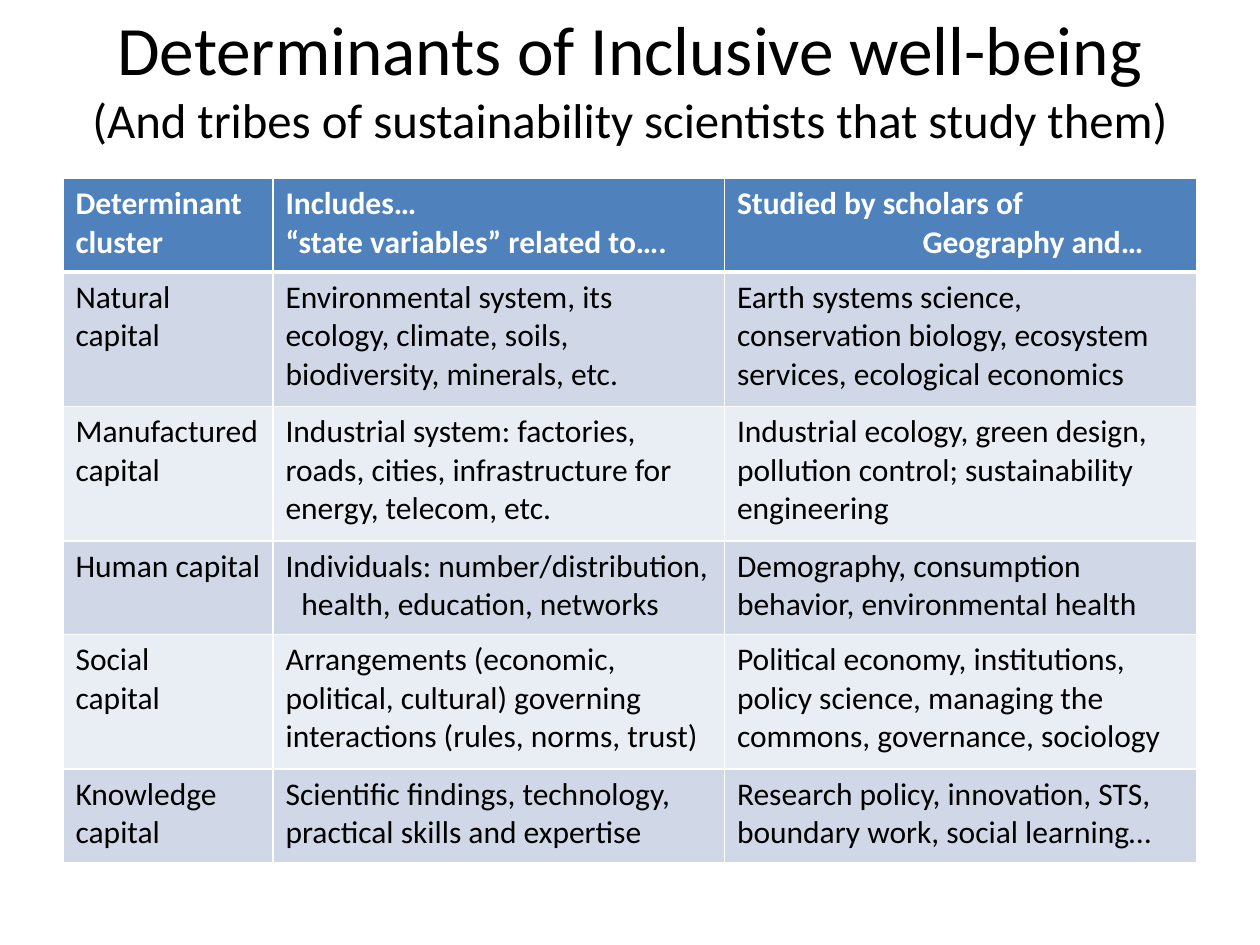
import pptx
import pptx.dml.color
import pptx.enum.text
import pptx.oxml
import pptx.oxml.ns
import pptx.util

Pt = pptx.util.Pt
RGBColor = pptx.dml.color.RGBColor

BLACK = RGBColor(0x00, 0x00, 0x00)
WHITE = RGBColor(0xFF, 0xFF, 0xFF)
HEADER_BLUE = RGBColor(0x4F, 0x81, 0xBD)
BAND_DARK = RGBColor(0xD0, 0xD8, 0xE8)
BAND_LIGHT = RGBColor(0xE9, 0xED, 0xF4)

COLUMN_WIDTHS = [120, 258, 270]
TWO_LINES, THREE_LINES = 53.5, 76.8
ROW_HEIGHTS = [TWO_LINES, THREE_LINES, THREE_LINES,
               TWO_LINES, THREE_LINES, TWO_LINES]
ROWS = [
    ["Determinant cluster",
     "Includes…\n“state variables” related to….",
     "Studied by scholars of\nGeography and…"],
    ["Natural\vcapital",
     "Environmental system, its ecology, climate, soils, biodiversity, "
     "minerals, etc.",
     "Earth systems science, conservation biology, ecosystem services, "
     "ecological economics"],
    ["Manufactured capital",
     "Industrial system: factories, roads, cities, infrastructure for "
     "energy, telecom, etc.",
     "Industrial ecology, green design, pollution control; "
     "sustainability engineering"],
    ["Human capital",
     "Individuals: number/distribution, health, education, networks",
     "Demography, consumption behavior, environmental health"],
    ["Social\vcapital",
     "Arrangements (economic, political, cultural) governing "
     "interactions (rules, norms, trust)",
     "Political economy, institutions, policy science, managing the "
     "commons, governance, sociology"],
    ["Knowledge capital",
     "Scientific findings, technology, practical skills and expertise",
     "Research policy, innovation, STS, boundary work, social learning…"],
]


class SlideBuilder:
    def __init__(self, slide, font="Calibri", body_size=18):
        self.slide = slide
        self.font = font
        self.body_size = body_size

    def format_run(self, r, size, color, bold=False):
        r.font.name = self.font
        r.font.size = Pt(size)
        r.font.bold = bold
        r.font.color.rgb = color

    def title(self, text, sizes, left, top, width, height):
        """Fill the title; each line takes its own size from sizes."""
        sp = self.slide.shapes.title
        sp.left, sp.top, sp.width, sp.height = map(
            Pt, (left, top, width, height))
        tf = sp.text_frame
        tf.text = text
        tf.word_wrap = True
        tf.auto_size = pptx.enum.text.MSO_AUTO_SIZE.NONE
        tf.vertical_anchor = pptx.enum.text.MSO_ANCHOR.MIDDLE
        tf.margin_top, tf.margin_bottom = Pt(4), Pt(0)
        p = tf.paragraphs[0]
        p.alignment = pptx.enum.text.PP_ALIGN.CENTER
        for r, size in zip(p.runs, sizes):
            self.format_run(r, size, BLACK)

    def borders(self, cell, top, bottom):
        """Draw white cell borders, with 1 pt sides."""
        tc_pr = cell._tc.get_or_add_tcPr()
        edges = (("lnL", 1), ("lnR", 1), ("lnT", top), ("lnB", bottom))
        for i, (tag, width) in enumerate(edges):
            tc_pr.insert(i, pptx.oxml.parse_xml(
                f'<a:{tag} {pptx.oxml.ns.nsdecls("a")} w="{Pt(width)}">'
                f'<a:solidFill><a:srgbClr val="{WHITE}"/></a:solidFill>'
                f'</a:{tag}>'))

    def cell(self, cell, text, fill, color, bold):
        cell.fill.solid()
        cell.fill.fore_color.rgb = fill
        cell.text_frame.text = text
        for p in cell.text_frame.paragraphs:
            for r in p.runs:
                self.format_run(r, self.body_size, color, bold)

    def table(self, rows, widths, heights, left, top):
        frame = self.slide.shapes.add_table(
            len(rows), len(widths), Pt(left), Pt(top),
            Pt(sum(widths)), Pt(sum(heights)))
        table = frame.table
        for column, width in zip(table.columns, widths):
            column.width = Pt(width)
        for i, texts in enumerate(rows):
            table.rows[i].height = Pt(heights[i])
            header = i == 0
            band = BAND_DARK if i % 2 else BAND_LIGHT
            for j, text in enumerate(texts):
                cell = table.cell(i, j)
                self.cell(cell, text, HEADER_BLUE if header else band,
                          WHITE if header else BLACK, header)
                self.borders(cell, top=3 if i == 1 else 1,
                             bottom=3 if header else 1)
        return table

    def indent(self, p, left, first=0):
        p_pr = p._p.get_or_add_pPr()
        p_pr.set("marL", str(Pt(left)))
        p_pr.set("indent", str(Pt(first)))


def main():
    prs = pptx.Presentation()
    prs.slide_width, prs.slide_height = Pt(720), Pt(540)
    s = SlideBuilder(prs.slides.add_slide(prs.slide_layouts[5]))
    s.title("Determinants of Inclusive well-being\v"
            "(And tribes of sustainability scientists that study them)",
            (39.6, 27.9), 36, 0, 648, 84)
    table = s.table(ROWS, COLUMN_WIDTHS, ROW_HEIGHTS, 36, 102)
    s.indent(table.cell(0, 2).text_frame.paragraphs[1], 106)
    s.indent(table.cell(3, 1).text_frame.paragraphs[0], 9, -9)
    prs.save("out.pptx")


if __name__ == "__main__":
    main()
